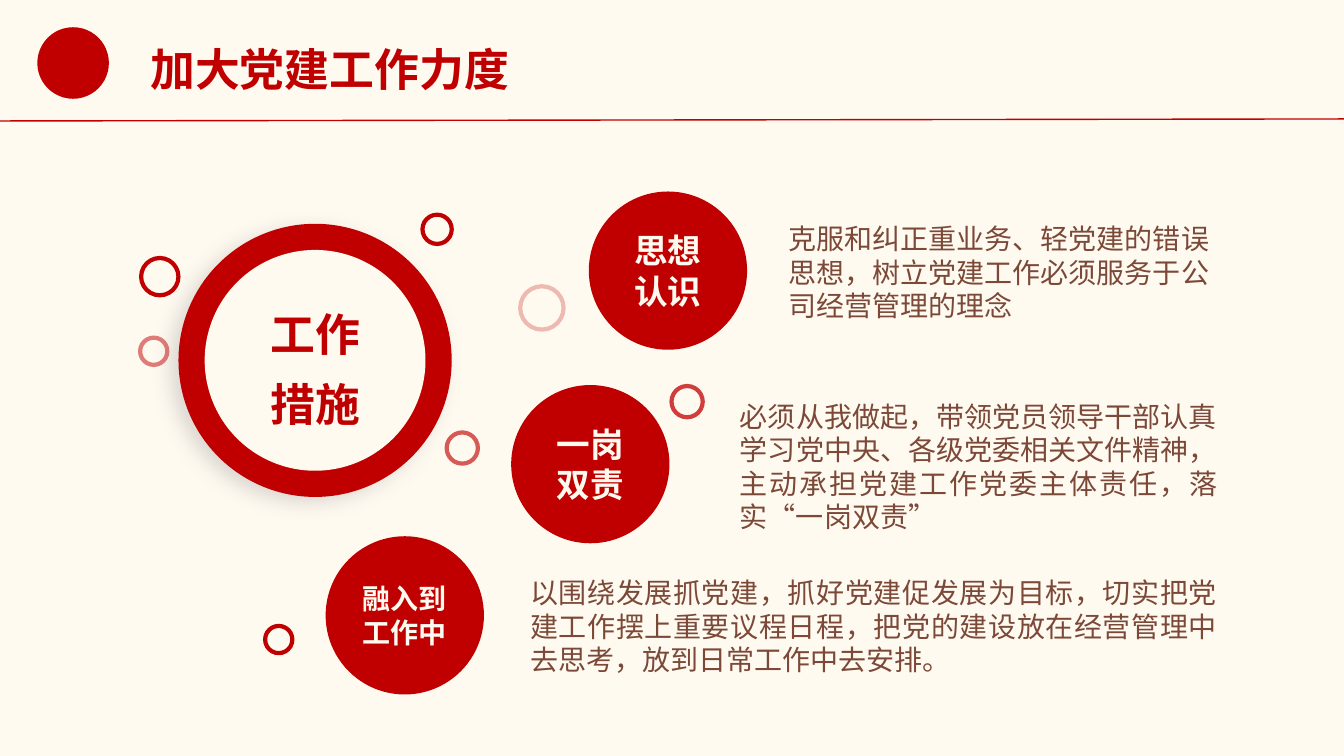
from lxml import etree
from pptx import Presentation, util as u
from pptx.dml.color import RGBColor
from pptx.enum import shapes, text
from pptx.oxml import ns

PX = 9144  # EMU in one px, 100 px to the inch
FONT = "Noto Sans CJK SC"
COLORS = {"red": "C00000", "cream": "FFFAF0", "brown": "7C4939", "shadow": "A6A6A6"}

TOPICS = [  # circle place, label, label size, description box, description, alignment
    ((584, 190), "思想认识", 24, (772, 215, 445, 111),
     "克服和纠正重业务、轻党建的错误思想，树立党建工作必须服务于公司经营管理的理念",
     text.PP_ALIGN.LEFT),
    ((507, 382), "一岗双责", 24, (724, 391, 493, 145),
     "必须从我做起，带领党员领导干部认真学习党中央、各级党委相关文件精神，"
     "主动承担党建工作党委主体责任，落实“一岗双责”",
     text.PP_ALIGN.JUSTIFY),
    ((323, 532), "融入到工作中", 20, (516, 566, 701, 111),
     "以围绕发展抓党建，抓好党建促发展为目标，切实把党建工作摆上重要议程日程，"
     "把党的建设放在经营管理中去思考，放到日常工作中去安排。",
     text.PP_ALIGN.JUSTIFY),
]
TOPIC_DIAMETER = 157
BUBBLES = [  # left, top, diameter, opacity in percent
    (516, 284, 43, 25), (666, 383, 31, 75), (263, 621, 27, 100), (139, 335, 27, 50),
    (140, 256, 37, 100), (443, 429, 31, 63), (419, 213, 29, 100),
]


def color(name):
    return RGBColor.from_string(COLORS[name])


def add_xml(parent, tag, **attributes):
    values = {key: str(value) for key, value in attributes.items()}
    return etree.SubElement(parent, ns.qn(tag), values)


def write(frame, content, size, ink, bold=False, align=text.PP_ALIGN.LEFT,
          anchor=text.MSO_ANCHOR.TOP, wrap=True, spacing=None, margin=None):
    """Fill a text frame, one paragraph for each line of content."""
    frame.text = content
    frame.word_wrap = wrap
    frame.vertical_anchor = anchor
    if margin is not None:
        frame.margin_left = frame.margin_right = margin
        frame.margin_top = frame.margin_bottom = margin
    for paragraph in frame.paragraphs:
        paragraph.alignment = align
        paragraph.line_spacing = spacing
        for run in paragraph.runs:
            run.font.size = u.Pt(size)
            run.font.bold = bold
            run.font.color.rgb = color(ink)
            run.font.name = FONT
            properties = run._r.get_or_add_rPr()
            properties.set("lang", "zh-CN")
            add_xml(properties, "a:ea", typeface=FONT)


class Deck:
    def __init__(self, width, height):
        self.presentation = Presentation()
        self.presentation.slide_width = width * PX
        self.presentation.slide_height = height * PX
        self.slide = None

    def add_slide(self):
        layout = self.presentation.slide_layouts[5]
        self.slide = self.presentation.slides.add_slide(layout)
        fill = self.slide.background.fill
        fill.solid()
        fill.fore_color.rgb = color("cream")

    def title(self, box, content):
        shape = self.slide.shapes.title
        shape.left, shape.top, shape.width, shape.height = (n * PX for n in box)
        write(shape.text_frame, content, 32, "red", bold=True, wrap=False)
        shape.text_frame.auto_size = text.MSO_AUTO_SIZE.SHAPE_TO_FIT_TEXT

    def rule(self, x1, y1, x2, y2):
        line = self.slide.shapes.add_connector(
            shapes.MSO_CONNECTOR.STRAIGHT, *(n * PX for n in (x1, y1, x2, y2)))
        line.line.color.rgb = color("red")
        line.line.width = u.Pt(1)
        add_xml(line._element.spPr, "a:effectLst")

    def circle(self, left, top, diameter, fill=None):
        shape = self.slide.shapes.add_shape(
            shapes.MSO_SHAPE.OVAL, left * PX, top * PX, diameter * PX, diameter * PX)
        shape.shadow.inherit = False
        if fill:
            shape.fill.solid()
            shape.fill.fore_color.rgb = color(fill)
        else:
            shape.fill.background()
        shape.line.fill.background()
        return shape

    def label_circle(self, left, top, diameter, fill, content, **style):
        shape = self.circle(left, top, diameter, fill)
        write(shape.text_frame, content, bold=True, align=text.PP_ALIGN.CENTER,
              anchor=text.MSO_ANCHOR.MIDDLE, **style)

    def bubble(self, left, top, diameter, opacity):
        """Draw an outlined circle with the given line opacity."""
        shape = self.circle(left, top, diameter)
        shape.line.color.rgb = color("red")
        shape.line.width = u.Pt(3)
        if opacity < 100:
            stroke = shape._element.spPr.find(".//" + ns.qn("a:srgbClr"))
            add_xml(stroke, "a:alpha", val=opacity * 1000)

    def shadow_circle(self, left, top, diameter, fill):
        shape = self.circle(left, top, diameter, fill)
        effects = shape._element.spPr.find(ns.qn("a:effectLst"))
        shadow = add_xml(effects, "a:outerShdw", blurRad=u.Pt(14), dist=u.Pt(7),
                         dir=150 * 60000, algn="tr", rotWithShape=0)
        tint = add_xml(shadow, "a:srgbClr", val=COLORS["shadow"])
        add_xml(tint, "a:alpha", val=40000)

    def text_box(self, box, content, **style):
        frame = self.slide.shapes.add_textbox(*(n * PX for n in box)).text_frame
        write(frame, content, **style)
        frame.auto_size = text.MSO_AUTO_SIZE.SHAPE_TO_FIT_TEXT


def main():
    deck = Deck(1333, 750)
    deck.add_slide()
    deck.circle(37, 27, 71, "red")
    deck.rule(0, 120, 1333, 118)
    deck.title((139, 36, 379, 64), "加大党建工作力度")

    for place, label, label_size, box, description, align in TOPICS:
        deck.text_box(box, description, size=20, ink="brown", align=align)
        deck.label_circle(*place, TOPIC_DIAMETER, "red", label, size=label_size,
                          ink="cream")

    deck.shadow_circle(177, 222, 271, "red")
    deck.label_circle(203, 248, 219, "cream", "工作\n措施", size=32, ink="red",
                      spacing=1.3, margin=0)
    for bubble in BUBBLES:
        deck.bubble(*bubble)

    deck.presentation.save("out.pptx")


if __name__ == "__main__":
    main()
